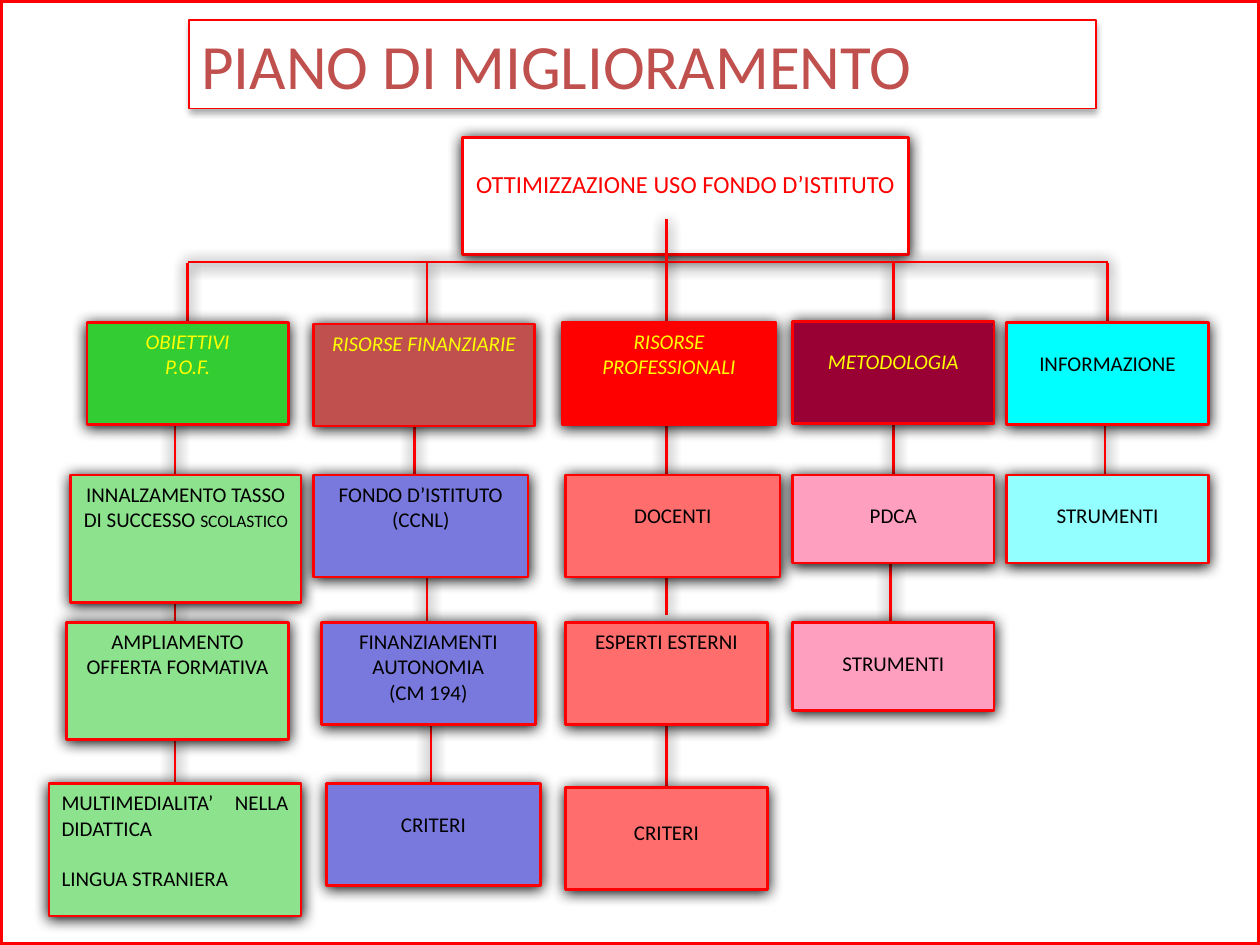
from lxml.etree import SubElement
from pptx import Presentation
from pptx.dml.color import RGBColor
from pptx.enum.shapes import MSO_CONNECTOR, MSO_SHAPE
from pptx.enum.text import MSO_ANCHOR, PP_ALIGN
from pptx.oxml.ns import qn
from pptx.util import Inches, Pt

RED = RGBColor(0xFF, 0x00, 0x00)
WHITE = RGBColor(0xFF, 0xFF, 0xFF)
BLACK = RGBColor(0x00, 0x00, 0x00)
YELLOW = RGBColor(0xFF, 0xFF, 0x00)
BRICK = RGBColor(0xC0, 0x50, 0x4D)
GREEN = RGBColor(0x33, 0xCC, 0x33)
LIGHT_GREEN = RGBColor(0x8D, 0xE3, 0x8D)
VIOLET = RGBColor(0x79, 0x79, 0xDD)
SALMON = RGBColor(0xFF, 0x6D, 0x6D)
MAROON = RGBColor(0x99, 0x00, 0x33)
PINK = RGBColor(0xFF, 0x9F, 0xBF)
CYAN = RGBColor(0x00, 0xFF, 0xFF)
LIGHT_CYAN = RGBColor(0x93, 0xFF, 0xFF)

# Rows of the chart, in inches
ROOT, BUS, HEAD, FIRST, SECOND, THIRD = 1.09, 2.08, 2.56, 3.77, 4.94, 6.22
TALL, SHORT = 0.81, 0.7
CENTER, JUSTIFY = PP_ALIGN.CENTER, PP_ALIGN.JUSTIFY

HARD_SHADOW = {"opacity": 100, "blur": 8.5, "distance": 1}
SOFT_SHADOW = {"opacity": 32, "blur": 3.5, "distance": 2.2}


def outline(item, width, shadow=None):
    """Give a shape or connector its red line and, if asked, a shadow straight below."""
    item.line.color.rgb = RED
    item.line.width = Pt(width)
    effects = SubElement(item._element.spPr, qn("a:effectLst"))
    if shadow:
        outer = SubElement(effects, qn("a:outerShdw"), rotWithShape="0", dir="5400000",
                           blurRad=str(Pt(shadow["blur"])), dist=str(Pt(shadow["distance"])))
        color = SubElement(outer, qn("a:srgbClr"), val="000000")
        SubElement(color, qn("a:alpha"), val=str(shadow["opacity"] * 1000))


def add_box(place, fill, paragraphs, color=BLACK, size=12, gap=0, align=CENTER,
            italic=False, line=1.5, shadow=HARD_SHADOW, wrap=True, spacing=0):
    """Add a filled box; gap is the free text line on top, in points of type.

    Text after a bar in a paragraph is set in 10 points.
    """
    box = slide.shapes.add_shape(MSO_SHAPE.RECTANGLE, *map(Inches, place))
    box.fill.solid()
    box.fill.fore_color.rgb = fill
    outline(box, line, shadow)
    frame = box.text_frame
    frame.word_wrap = wrap
    frame.vertical_anchor = MSO_ANCHOR.TOP
    frame.margin_top = Inches(0.05) + Pt(gap * 1.22)
    for number, text in enumerate(paragraphs):
        paragraph = frame.paragraphs[0] if number == 0 else frame.add_paragraph()
        paragraph.alignment = align
        if number:
            paragraph.space_before = Pt(spacing)
        for part, part_size in zip(text.split("|"), (size, 10)):
            run = paragraph.add_run()
            run.text = part
            run.font.color.rgb = color
            font_format = {"name": "Calibri", "size": Pt(part_size), "italic": italic}
            for key, value in font_format.items():
                setattr(run.font, key, value)


prs = Presentation()
prs.slide_width, prs.slide_height = Inches(10), Inches(7.5)
slide = prs.slides.add_slide(prs.slide_layouts[6])

add_box((1.5, 0.16, 7.2, 0.7), WHITE, ["PIANO DI MIGLIORAMENTO"], color=BRICK, size=36,
        align=PP_ALIGN.LEFT, line=0.75, shadow=SOFT_SHADOW, wrap=False)
add_box((3.67, ROOT, 3.54, 0.93), WHITE, ["OTTIMIZZAZIONE USO FONDO D’ISTITUTO"],
        color=RED, size=14, gap=12)

# Links: the bus, the drops to the headings, the stems between boxes (x, top, bottom)
drops = [(x, BUS + 0.01, HEAD) for x in (1.49, 3.39, 5.29, 7.09, 8.79)]
stems = [
    (5.29, 1.74, BUS + 0.01),
    (1.39, 3.33, FIRST), (1.39, 4.79, SECOND), (1.39, 5.87, THIRD),
    (3.29, 3.33, FIRST), (3.39, 4.59, SECOND), (3.42, 5.75, THIRD),
    (5.29, 3.33, FIRST), (5.29, 4.59, 4.88), (5.29, 5.75, 6.24),
    (7.09, 3.37, FIRST), (7.07, 4.47, SECOND),
    (8.77, 3.37, FIRST),
]
bus = (drops[0][0], BUS, drops[-1][0], BUS)
for ends in [bus] + [(x, top, x, bottom) for x, top, bottom in drops + stems]:
    link = slide.shapes.add_connector(MSO_CONNECTOR.STRAIGHT, *map(Inches, ends))
    outline(link, 1.5, HARD_SHADOW)

# Headings: left, top, width, fill, text colour, gap, paragraphs
headings = [
    (0.69, HEAD, 1.6, GREEN, YELLOW, 0, ["OBIETTIVI", "P.O.F."]),
    (2.49, HEAD + 0.01, 1.75, BRICK, YELLOW, 0, ["RISORSE FINANZIARIE"]),
    (4.46, HEAD, 1.7, RED, YELLOW, 0, ["RISORSE PROFESSIONALI"]),
    (6.29, HEAD - 0.01, 1.6, MAROON, YELLOW, 10, ["METODOLOGIA"]),
    (7.99, HEAD, 1.6, CYAN, BLACK, 10, ["INFORMAZIONE"]),
]
for left, top, width, fill, color, gap, paragraphs in headings:
    add_box((left, top, width, TALL), fill, paragraphs, color=color, gap=gap,
            italic=color == YELLOW)

# Items by column: left, top, width, height, gap, paragraphs
columns = {
    LIGHT_GREEN: [
        (0.56, FIRST, 1.83, 1.01, 0, ["INNALZAMENTO TASSO DI SUCCESSO |SCOLASTICO"]),
        (0.53, SECOND, 1.76, 0.93, 0, ["AMPLIAMENTO OFFERTA FORMATIVA"]),
    ],
    VIOLET: [
        (2.49, FIRST, 1.7, TALL, 0, ["FONDO D’ISTITUTO", "(CCNL)"]),
        (2.55, SECOND, 1.7, TALL, 0, ["FINANZIAMENTI AUTONOMIA", "(CM 194)"]),
        (2.59, THIRD, 1.7, TALL, 10, ["CRITERI"]),
    ],
    SALMON: [
        (4.49, FIRST, 1.7, TALL, 10, ["DOCENTI"]),
        (4.49, SECOND, 1.6, TALL, 0, ["ESPERTI ESTERNI"]),
        (4.49, THIRD + 0.03, 1.6, TALL, 12, ["CRITERI"]),
    ],
    PINK: [
        (6.29, FIRST, 1.6, SHORT, 10, ["PDCA"]),
        (6.29, SECOND, 1.6, SHORT, 10, ["STRUMENTI"]),
    ],
    LIGHT_CYAN: [(7.99, FIRST, 1.6, SHORT, 10, ["STRUMENTI"])],
}
for fill, items in columns.items():
    for *place, gap, paragraphs in items:
        add_box(place, fill, paragraphs, gap=gap)
add_box((0.39, THIRD, 2, 1.05), LIGHT_GREEN,
        ["MULTIMEDIALITA’ NELLA DIDATTICA", "LINGUA STRANIERA"], align=JUSTIFY, spacing=14.6)

border = slide.shapes.add_shape(MSO_SHAPE.RECTANGLE, 0, 0, prs.slide_width, prs.slide_height)
border.fill.background()
outline(border, 3)

prs.save("out.pptx")
